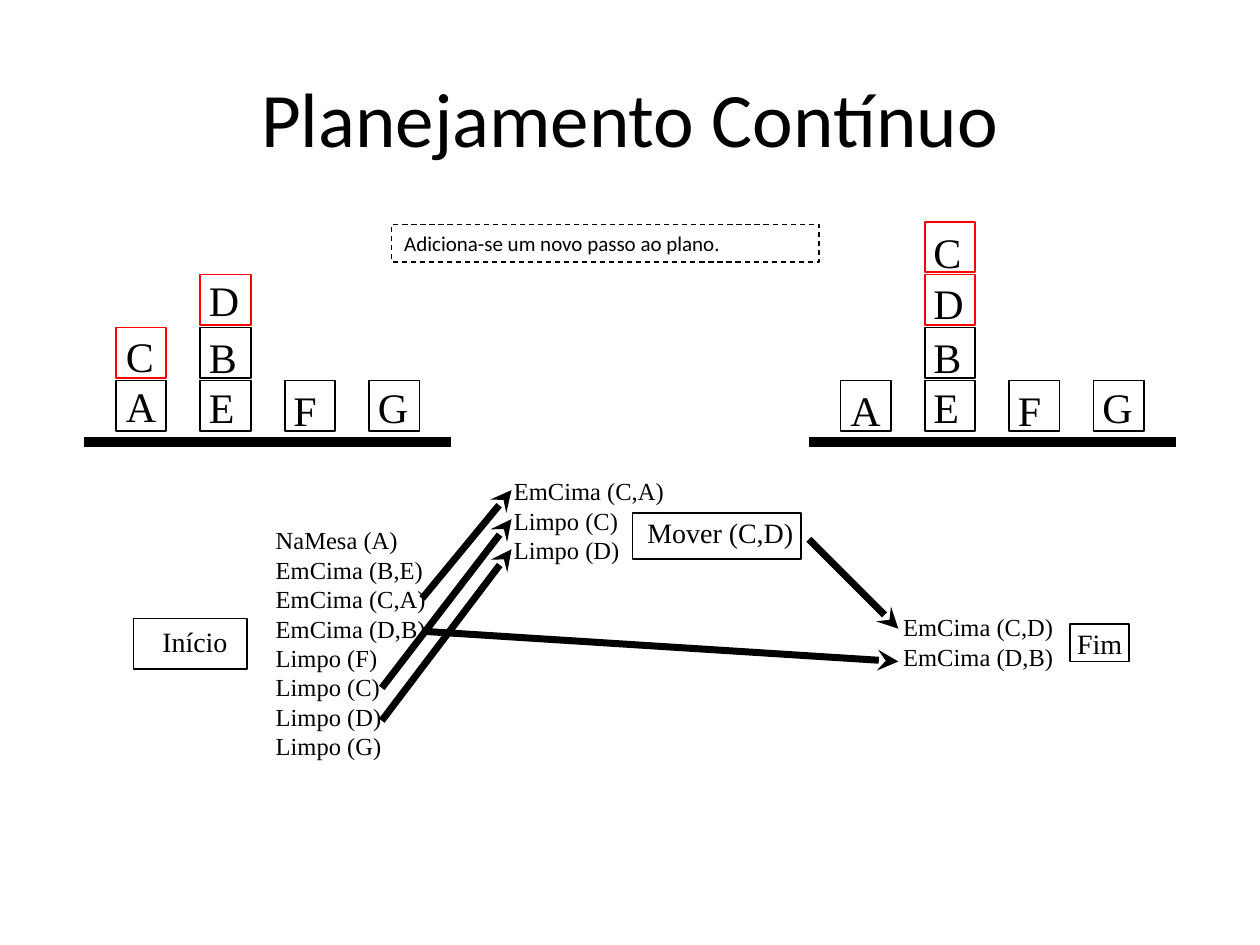
from dataclasses import dataclass

from lxml import etree
from pptx import Presentation
from pptx import util as u
from pptx.dml.color import RGBColor
from pptx.enum import dml, shapes, text
from pptx.oxml.ns import qn


@dataclass(frozen=True)
class Theme:
    ink: RGBColor = RGBColor(0, 0, 0)
    changed: RGBColor = RGBColor(255, 0, 0)
    sans: str = "Calibri"
    serif: str = "Times New Roman"
    title: int = 44
    block: int = 24
    step: int = 16
    condition: int = 14
    caption: int = 12


THEME = Theme()


@dataclass(frozen=True)
class Box:
    left: float
    top: float
    width: float
    height: float

    def lengths(self) -> list:
        return [u.Inches(v) for v in (self.left, self.top, self.width, self.height)]


@dataclass(frozen=True)
class Block:
    column: int
    row: int
    color: RGBColor = THEME.ink


@dataclass(frozen=True)
class Label:
    box: Box
    lines: tuple
    size: int = THEME.block


@dataclass(frozen=True)
class Scene:
    left: float
    blocks: tuple
    labels: tuple


@dataclass(frozen=True)
class Arrow:
    x1: float
    y1: float
    x2: float
    y2: float


# Block letters are placed relative to the left end of each table
TABLE_WIDTH, TABLE_TOP = 2.91, 3.51
BLOCK_SIZE, COLUMN_STEP, ROW_STEP = 0.4, 0.67, 0.42
SHARED_BLOCKS = (Block(0, 0), Block(1, 0), Block(2, 0), Block(3, 0),
                 Block(1, 1), Block(1, 2, THEME.changed))
SHARED_LABELS = (
    Label(Box(0.89, 2.58, 0.43, 0.91), ("B", "E")),
    Label(Box(1.56, 3, 0.39, 0.51), ("F",)),
    Label(Box(2.23, 2.98, 0.45, 0.51), ("G",)),
)
SCENES = (
    Scene(0.67, (Block(0, 1, THEME.changed),), (
        Label(Box(0.23, 2.57, 0.45, 0.91), ("C", "A")),
        Label(Box(0.89, 2.13, 0.45, 0.51), ("D",)))),
    Scene(6.42, (Block(1, 3, THEME.changed),), (
        Label(Box(0.23, 3, 0.45, 0.51), ("A",)),
        Label(Box(0.89, 1.75, 0.45, 0.91), ("C", "D")))),
)

# Plan: step frames, step names, conditions and causal links
STEP_FRAMES = (Box(1.06, 4.91, 0.9, 0.4), Box(5.02, 4.07, 1.34, 0.37),
               Box(8.49, 4.95, 0.47, 0.3))
PLAN_LABELS = (
    Label(Box(1.19, 4.91, 0.73, 0.37), ("Início",), THEME.step),
    Label(Box(5.04, 4.04, 1.38, 0.37), ("Mover (C,D)",), THEME.step),
    Label(Box(8.45, 4.92, 0.57, 0.37), ("Fim",), THEME.step),
    Label(Box(2.09, 4.12, 1.4, 1.99),
          ("NaMesa (A)", "EmCima (B,E)", "EmCima (C,A)", "EmCima (D,B)",
           "Limpo (F)", "Limpo (C)", "Limpo (D)", "Limpo (G)"), THEME.condition),
    Label(Box(3.98, 3.73, 1.4, 0.81),
          ("EmCima (C,A)", "Limpo (C)", "Limpo (D)"), THEME.condition),
    Label(Box(7.07, 4.81, 1.4, 0.57),
          ("EmCima (C,D)", "EmCima (D,B)"), THEME.condition),
)
LINKS = (
    Arrow(3.35, 5.01, 7.13, 5.25),
    Arrow(3.35, 4.75, 4.06, 3.89),
    Arrow(3.03, 5.46, 4.06, 4.12),
    Arrow(3.03, 5.72, 4.06, 4.36),
    Arrow(6.42, 4.28, 7.13, 4.99),
)


def apply(target, values: dict) -> None:
    for name, value in values.items():
        setattr(target, name, value)


def write(frame, lines: tuple, size: int, font: str,
          align=text.PP_ALIGN.LEFT) -> None:
    for index, line in enumerate(lines):
        paragraph = frame.paragraphs[0] if index == 0 else frame.add_paragraph()
        paragraph.alignment = align
        run = paragraph.add_run()
        run.text = line
        apply(run.font, {"name": font, "size": u.Pt(size)})
        run.font.color.rgb = THEME.ink


def add_label(slide, label: Label, offset: float = 0) -> None:
    shape = slide.shapes.add_textbox(*label.box.lengths())
    shape.left += u.Inches(offset)
    shape.text_frame.word_wrap = False
    write(shape.text_frame, label.lines, label.size, THEME.serif)


def add_frame(slide, box: Box, color: RGBColor = THEME.ink, width: float = 1):
    shape = slide.shapes.add_shape(shapes.MSO_SHAPE.RECTANGLE, *box.lengths())
    shape.shadow.inherit = False
    shape.fill.background()
    shape.line.color.rgb = color
    shape.line.width = u.Pt(width)
    return shape


def add_line(slide, arrow: Arrow, width: float, head: bool = False) -> None:
    ends = [u.Inches(v) for v in (arrow.x1, arrow.y1, arrow.x2, arrow.y2)]
    line = slide.shapes.add_connector(shapes.MSO_CONNECTOR.STRAIGHT, *ends)
    line.line.color.rgb = THEME.ink
    line.line.width = u.Pt(width)
    if head:
        etree.SubElement(line.line._get_or_add_ln(), qn("a:tailEnd"), type="stealth")
    etree.SubElement(line._element.spPr, qn("a:effectLst"))


def add_scene(slide, scene: Scene) -> None:
    add_line(slide, Arrow(scene.left, TABLE_TOP, scene.left + TABLE_WIDTH, TABLE_TOP), 6)
    for block in SHARED_BLOCKS + scene.blocks:
        add_frame(slide, Box(scene.left + 0.25 + block.column * COLUMN_STEP,
                             3.02 - block.row * ROW_STEP, BLOCK_SIZE, BLOCK_SIZE),
                  block.color)
    for label in SHARED_LABELS + scene.labels:
        add_label(slide, label, scene.left)


def main() -> None:
    presentation = Presentation()
    apply(presentation, {"slide_width": u.Inches(10), "slide_height": u.Inches(7.5)})
    slide = presentation.slides.add_slide(presentation.slide_layouts[6])

    # Title
    title = slide.shapes.add_textbox(*Box(0.5, 0.3, 9, 1.25).lengths()).text_frame
    apply(title, {"word_wrap": True, "vertical_anchor": text.MSO_ANCHOR.MIDDLE})
    write(title, ("Planejamento Contínuo",), THEME.title, THEME.sans,
          text.PP_ALIGN.CENTER)

    # Dashed caption
    caption = add_frame(slide, Box(3.11, 1.78, 3.39, 0.3), width=0.75)
    caption.line.dash_style = dml.MSO_LINE.DASH
    caption.text_frame.word_wrap = True
    write(caption.text_frame, ("Adiciona-se um novo passo ao plano.",),
          THEME.caption, THEME.sans)

    # Current and goal states
    for scene in SCENES:
        add_scene(slide, scene)

    # Plan
    for box in STEP_FRAMES:
        add_frame(slide, box)
    for label in PLAN_LABELS:
        add_label(slide, label)
    for link in LINKS:
        add_line(slide, link, 4, head=True)

    presentation.save("out.pptx")


if __name__ == "__main__":
    main()
